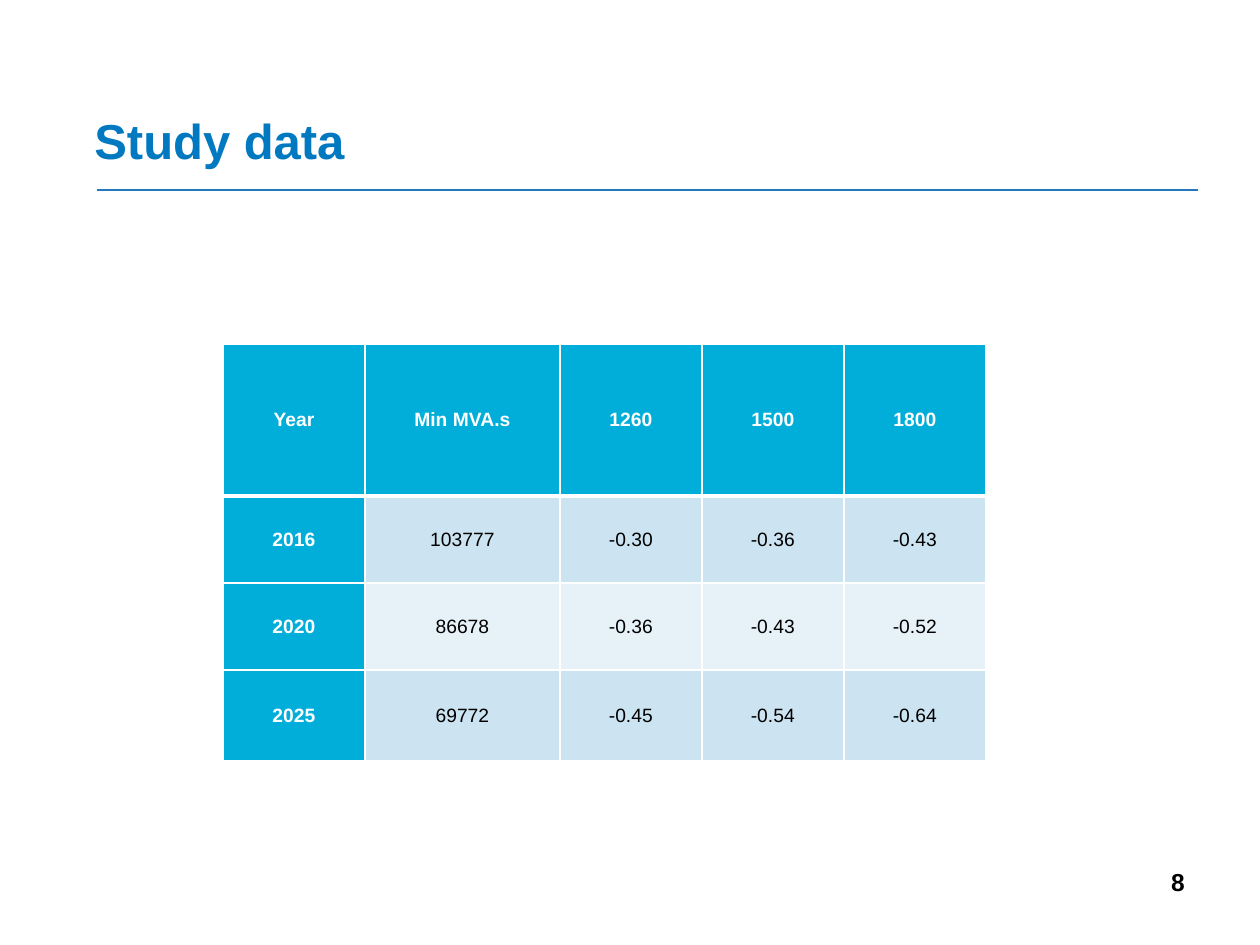
from lxml import etree
from pptx import Presentation
from pptx.dml.color import RGBColor
from pptx.enum.shapes import MSO_CONNECTOR
from pptx.enum.text import MSO_ANCHOR as ANCHOR, PP_ALIGN as ALIGN
from pptx.oxml import parse_xml
from pptx.oxml.ns import nsdecls, qn
from pptx.util import Pt

PX_PER_INCH = 126
CYAN, PALE, PALER = "00AED9", "CCE3F1", "E7F2F8"
WHITE, BLACK, BLUE = "FFFFFF", "000000", "0079C1"

ROWS = [
    ["Year", "Min MVA.s", "1260", "1500", "1800"],
    ["2016", "103777", "-0.30", "-0.36", "-0.43"],
    ["2020", "86678", "-0.36", "-0.43", "-0.52"],
    ["2025", "69772", "-0.45", "-0.54", "-0.64"],
]
COL_WIDTHS = [142, 195, 142, 142, 142]
ROW_HEIGHTS = [152, 87, 87, 91]


def px(n):
    return round(n * 914400 / PX_PER_INCH)


def rgb(value):
    return RGBColor.from_string(value)


def style(p, size, color, bold, align):
    p.alignment = align
    font = p.font
    font.name, font.size, font.bold = "Arial", Pt(size), bold
    font.color.rgb = rgb(color)


def add_text(s, box, text, size, color, align, anchor):
    tf = s.shapes.add_textbox(*map(px, box)).text_frame
    tf.word_wrap = True
    tf.vertical_anchor = anchor
    p = tf.paragraphs[0]
    p.text = text
    style(p, size, color, True, align)


def add_heading(s, x, y, w, h):
    """Place the title with the rule below it."""
    rule_y = px(y + h + 14)
    rule = s.shapes.add_connector(
        MSO_CONNECTOR.STRAIGHT, px(x + 15), rule_y, px(x + w + 1), rule_y)
    rule.line.color.rgb = rgb("2478C0")
    rule.line.width = Pt(1.5)
    etree.SubElement(rule._element.spPr, qn("a:effectLst"))
    add_text(s, (x, y, w, h), "Study data", 28, BLUE, ALIGN.LEFT, ANCHOR.BOTTOM)


def set_borders(cell, top, bottom):
    """Draw white borders, with top and bottom widths in points."""
    tcPr = cell._tc.get_or_add_tcPr()
    widths = {"lnL": 1, "lnR": 1, "lnT": top, "lnB": bottom}
    for i, (tag, width) in enumerate(widths.items()):
        tcPr.insert(i, parse_xml(
            f'<a:{tag} {nsdecls("a")} w="{Pt(width)}"><a:solidFill>'
            f'<a:srgbClr val="{WHITE}"/></a:solidFill></a:{tag}>'))


def add_data_table(s, x, y):
    table = s.shapes.add_table(
        len(ROWS), len(COL_WIDTHS), px(x), px(y),
        px(sum(COL_WIDTHS)), px(sum(ROW_HEIGHTS))).table
    for col, width in zip(table.columns, COL_WIDTHS):
        col.width = px(width)
    for row, height in zip(table.rows, ROW_HEIGHTS):
        row.height = px(height)
    for r, values in enumerate(ROWS):
        for c, value in enumerate(values):
            cell = table.cell(r, c)
            header = r == 0 or c == 0
            cell.fill.solid()
            cell.fill.fore_color.rgb = rgb(
                CYAN if header else PALE if r % 2 else PALER)
            cell.vertical_anchor = ANCHOR.MIDDLE
            cell.margin_left = cell.margin_right = px(9)
            cell.margin_top = cell.margin_bottom = 0
            cell.text = value
            style(cell.text_frame.paragraphs[0], 11,
                  WHITE if header else BLACK, header, ALIGN.CENTER)
            set_borders(cell, 3 if r == 1 else 1, 3 if r == 0 else 1)


def main():
    prs = Presentation()
    prs.slide_width, prs.slide_height = px(1260), px(945)
    s = prs.slides.add_slide(prs.slide_layouts[6])
    add_heading(s, 82, 105, 1115, 71)
    add_data_table(s, 223, 344)
    add_text(s, (903, 861, 294, 66), "8", 14, BLACK, ALIGN.RIGHT, ANCHOR.TOP)
    prs.save("out.pptx")


if __name__ == "__main__":
    main()
